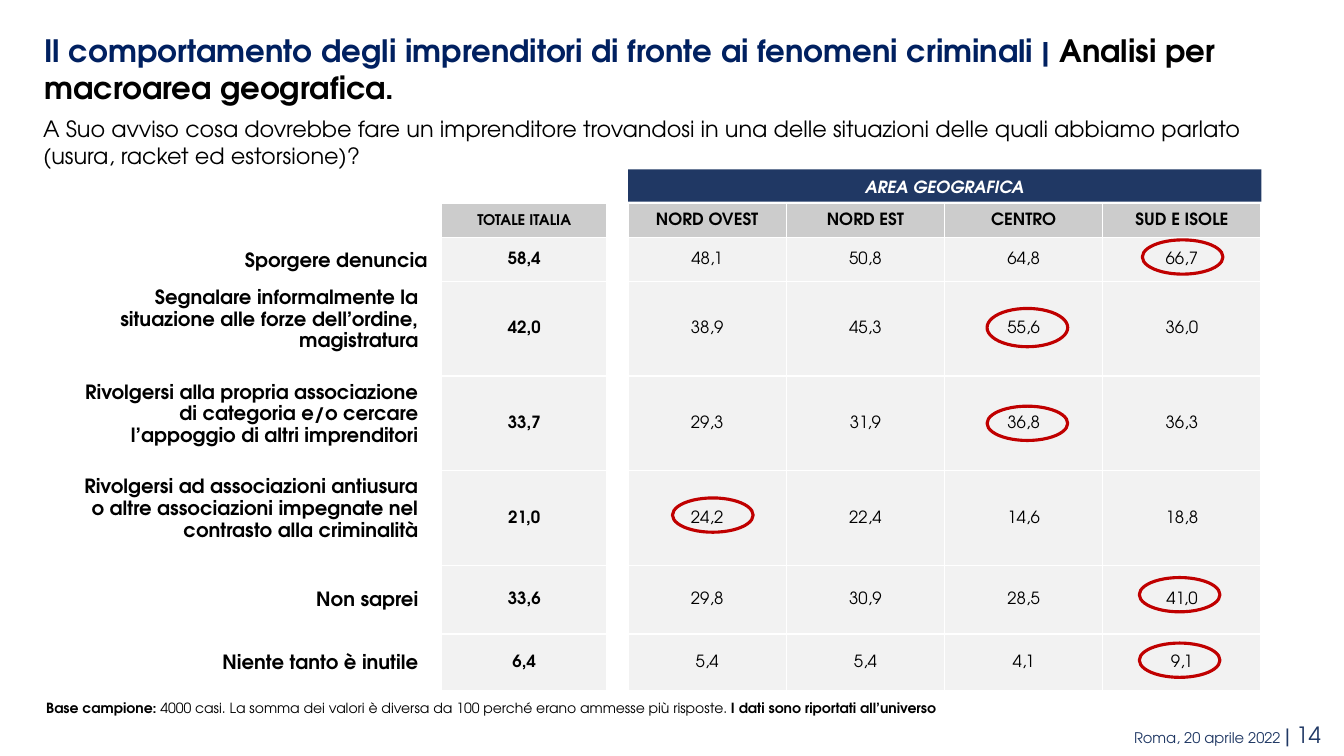
import pptx
import pptx.util
import pptx.dml.color
import pptx.enum.shapes
import pptx.enum.text

Inches, Pt = pptx.util.Inches, pptx.util.Pt
RGBColor = pptx.dml.color.RGBColor
Shape = pptx.enum.shapes.MSO_SHAPE
Align, Anchor = pptx.enum.text.PP_ALIGN, pptx.enum.text.MSO_ANCHOR

FONT = "TeX Gyre Adventor"
BLACK = RGBColor(0x00, 0x00, 0x00)
WHITE = RGBColor(0xFF, 0xFF, 0xFF)
NAVY = RGBColor(0x20, 0x38, 0x64)
TITLE_BLUE = RGBColor(0x00, 0x20, 0x60)
HEADER_GREY = RGBColor(0xCC, 0xCC, 0xCC)
CELL_GREY = RGBColor(0xF2, 0xF2, 0xF2)
RED = RGBColor(0xC0, 0x00, 0x00)


def write(frame, spans, align=Align.LEFT):
    """Fill the first paragraph with (text, size, colour, bold) spans."""
    para = frame.paragraphs[0]
    para.alignment = align
    for text, size, colour, bold in spans:
        span = para.add_run()
        span.text = text
        span.font.name = FONT
        span.font.size = Pt(size)
        span.font.color.rgb = colour
        span.font.bold = bold
    return para


def set_margins(target, side, top, bottom):
    target.margin_left = target.margin_right = Inches(side)
    target.margin_top, target.margin_bottom = Inches(top), Inches(bottom)


deck = pptx.Presentation()
deck.slide_width, deck.slide_height = Inches(13.33), Inches(7.5)
page = deck.slides.add_slide(deck.slide_layouts[5])

# Title
title = page.shapes.title
title.left, title.top = Inches(0.37), Inches(0.27)
title.width, title.height = Inches(12.68), Inches(0.82)
title.text_frame.word_wrap = True
title.text_frame.vertical_anchor = Anchor.TOP
set_margins(title.text_frame, 0.07, 0.04, 0.04)
write(title.text_frame, [
    ("Il comportamento degli imprenditori di fronte ai fenomeni criminali | ", 22, TITLE_BLUE, True),
    ("Analisi per macroarea geografica.", 22, BLACK, True),
])

# Question, sample note and footer
texts = [
    ((0.33, 1.09, 12.67, 0.64), Align.LEFT, [
        ("A Suo avviso cosa dovrebbe fare un imprenditore trovandosi in una delle situazioni "
         "delle quali abbiamo parlato (usura, racket ed estorsione)?", 16, BLACK, False)]),
    ((0.36, 6.89, 9.21, 0.27), Align.LEFT, [
        ("Base campione:", 10, BLACK, True),
        (" 4000 casi. La somma dei valori è diversa da 100 perché erano ammesse più risposte. ",
         10, BLACK, False),
        ("I dati sono riportati all’universo", 10, BLACK, True)]),
    ((6.27, 7.11, 6.93, 0.37), Align.RIGHT, [
        ("Roma, 20 aprile 2022 ", 10.5, NAVY, False),
        ("| 14", 16, NAVY, False)]),
]
for place, align, spans in texts:
    box = page.shapes.add_textbox(*map(Inches, place))
    box.text_frame.word_wrap = True
    write(box.text_frame, spans, align)

# Band above the four areas
band = page.shapes.add_shape(Shape.RECTANGLE, *map(Inches, (6.23, 1.68, 6.28, 0.32)))
band.shadow.inherit = False
band.fill.solid()
band.fill.fore_color.rgb = NAVY
band.line.fill.background()
band.text_frame.vertical_anchor = Anchor.MIDDLE
para = write(band.text_frame, [("AREA GEOGRAFICA", 12, WHITE, True)], Align.CENTER)
para.line_spacing = 1.1
para.runs[0].font.italic = True

# Table: narrow white columns separate labels, total and areas
column_widths = [3.57, 0.13, 1.64, 0.07, 0.14] + [1.57] * 4 + [0.14]
row_heights = [0.34, 0.43, 0.94, 0.94, 0.94, 0.68, 0.56]
value_columns = [2, 5, 6, 7, 8]
rows = [
    ("", "TOTALE ITALIA", "NORD OVEST", "NORD EST", "CENTRO", "SUD E ISOLE"),
    ("Sporgere denuncia", "58,4", "48,1", "50,8", "64,8", "66,7"),
    ("Segnalare informalmente la situazione alle forze dell’ordine, magistratura",
     "42,0", "38,9", "45,3", "55,6", "36,0"),
    ("Rivolgersi alla propria associazione di categoria e/o cercare l’appoggio di altri imprenditori",
     "33,7", "29,3", "31,9", "36,8", "36,3"),
    ("Rivolgersi ad associazioni antiusura o altre associazioni impegnate nel contrasto alla criminalità",
     "21,0", "24,2", "22,4", "14,6", "18,8"),
    ("Non saprei", "33,6", "29,8", "30,9", "28,5", "41,0"),
    ("Niente tanto è inutile", "6,4", "5,4", "5,4", "4,1", "9,1"),
]
table = page.shapes.add_table(
    len(row_heights), len(column_widths), Inches(0.68), Inches(2.02),
    Inches(sum(column_widths)), Inches(sum(row_heights))).table
table.first_row = table.horz_banding = False
for column, width in zip(table.columns, column_widths):
    column.width = Inches(width)
for row, height in zip(table.rows, row_heights):
    row.height = Inches(height)

for r, (label, *values) in enumerate(rows):
    for cell in table.rows[r].cells:
        cell.fill.solid()
        cell.fill.fore_color.rgb = WHITE
        cell.vertical_anchor = Anchor.MIDDLE
        set_margins(cell, 0.01, 0.01, 0)
    if label:
        cell = table.cell(r, 0)
        if r > 1:
            set_margins(cell, 0.1, 0.05, 0.05)
        if 2 <= r <= 4:
            cell.vertical_anchor = Anchor.TOP
        para = write(cell.text_frame, [(label, 14, BLACK, True)], Align.RIGHT)
        para.line_spacing = 1.2
    for c, value in zip(value_columns, values):
        cell = table.cell(r, c)
        cell.fill.fore_color.rgb = CELL_GREY if r else HEADER_GREY
        is_total = c == value_columns[0]
        size = 10.5 if is_total and r == 0 else 12
        write(cell.text_frame, [(value, size, BLACK, is_total or r == 0)], Align.CENTER)

# Rings around the highest values: left, top, height
rings = [(11.33, 2.38, 0.34), (9.79, 4.03, 0.34), (9.79, 3.06, 0.38),
         (6.67, 4.94, 0.34), (11.3, 5.73, 0.34), (11.3, 6.38, 0.34)]
for left, top, height in rings:
    ring = page.shapes.add_shape(Shape.OVAL, *map(Inches, (left, top, 0.8, height)))
    ring.shadow.inherit = False
    ring.fill.background()
    ring.line.color.rgb = RED
    ring.line.width = Pt(2.25)

deck.save("out.pptx")
